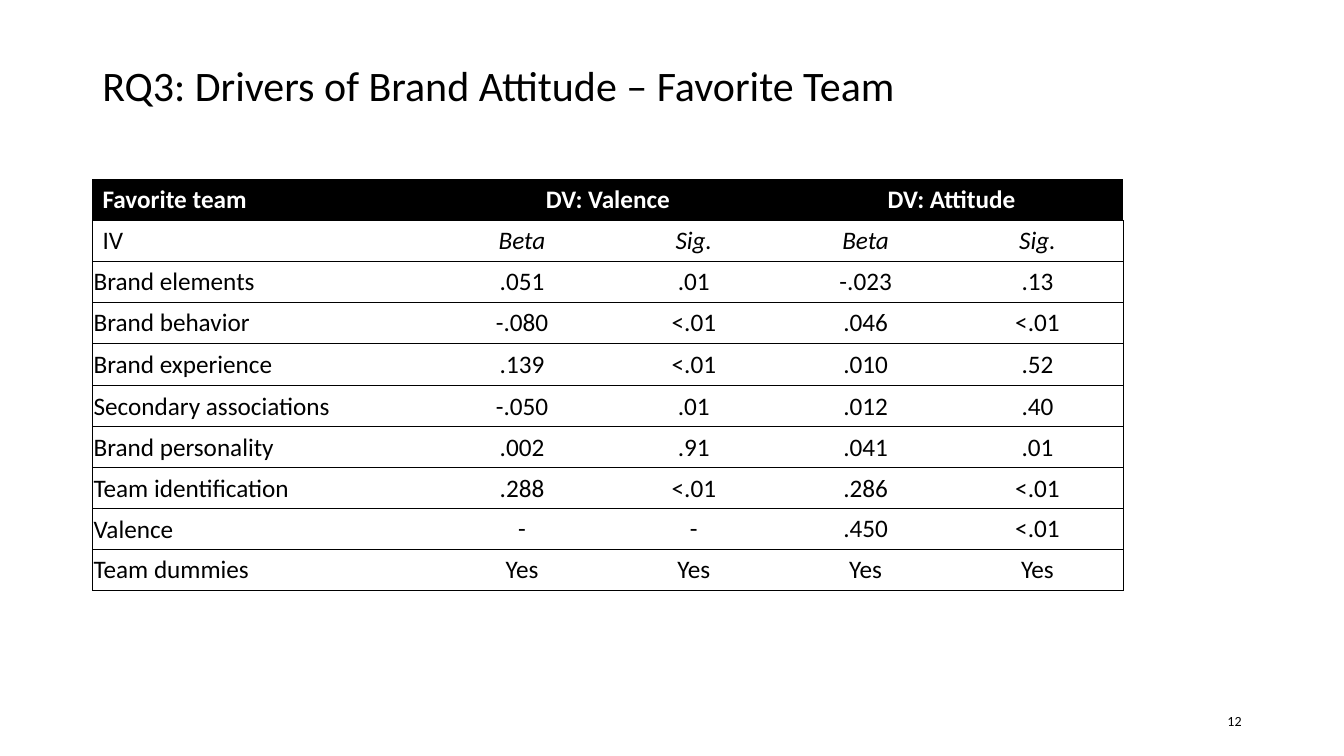
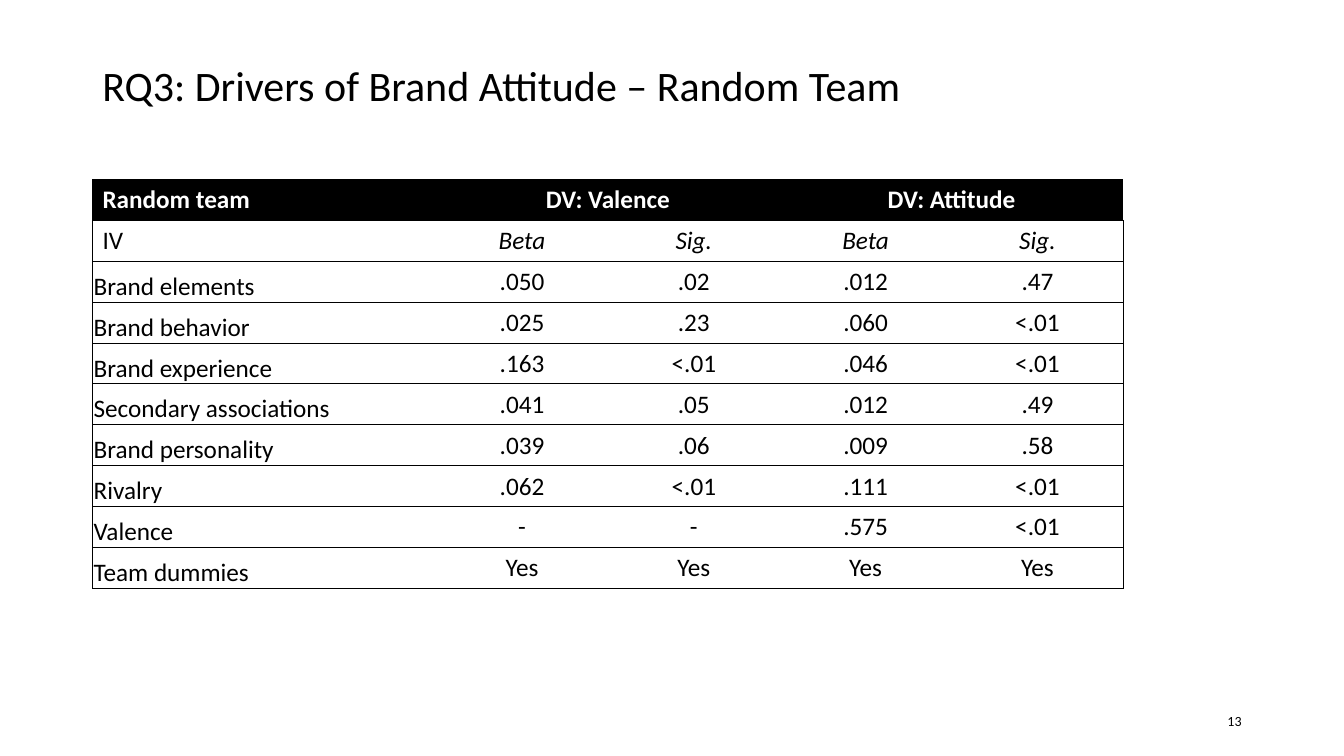
from lxml.etree import SubElement
from pptx import Presentation
from pptx.dml.color import RGBColor
from pptx.enum.text import MSO_ANCHOR, PP_ALIGN
from pptx.oxml.ns import qn
from pptx.util import Cm, Pt

COLORS = {"ink": "000000", "paper": "FFFFFF"}
FONT = "Calibri"
LEFT = Cm(2.33)
COLUMN_WIDTHS = [8.66] + [4.33] * 4
ROW_HEIGHT = 1.03
TIGHT = Cm(0.03)

RESULTS = [
    {
        "team": "Favorite",
        "page": "12",
        "label_anchor": MSO_ANCHOR.MIDDLE,
        "tall_rows": {4: 1.08},
        "drivers": [
            ["Brand elements", ".051", ".01", "-.023", ".13"],
            ["Brand behavior", "-.080", "<.01", ".046", "<.01"],
            ["Brand experience", ".139", "<.01", ".010", ".52"],
            ["Secondary associations", "-.050", ".01", ".012", ".40"],
            ["Brand personality", ".002", ".91", ".041", ".01"],
            ["Team identification", ".288", "<.01", ".286", "<.01"],
            ["Valence", "-", "-", ".450", "<.01"],
            ["Team dummies", "Yes", "Yes", "Yes", "Yes"],
        ],
    },
    {
        "team": "Random",
        "page": "13",
        "label_anchor": MSO_ANCHOR.BOTTOM,
        "tall_rows": {},
        "drivers": [
            ["Brand elements", ".050", ".02", ".012", ".47"],
            ["Brand behavior", ".025", ".23", ".060", "<.01"],
            ["Brand experience", ".163", "<.01", ".046", "<.01"],
            ["Secondary associations", ".041", ".05", ".012", ".49"],
            ["Brand personality", ".039", ".06", ".009", ".58"],
            ["Rivalry", ".062", "<.01", ".111", "<.01"],
            ["Valence", "-", "-", ".575", "<.01"],
            ["Team dummies", "Yes", "Yes", "Yes", "Yes"],
        ],
    },
]


def write(frame, text, size, color="ink", align=PP_ALIGN.LEFT, bold=False, italic=False):
    paragraph = frame.paragraphs[0]
    paragraph.alignment = align
    run = paragraph.add_run()
    run.text = text
    run.font.name = FONT
    run.font.size = Pt(size)
    run.font.bold = bold
    run.font.italic = italic
    run.font.color.rgb = RGBColor.from_string(COLORS[color])
    return paragraph


def set_borders(cell, drawn):
    properties = cell._tc.get_or_add_tcPr()
    for side in "LRTB":
        line = SubElement(properties, qn(f"a:ln{side}"), w=str(Pt(0.5)))
        if side in drawn:
            fill = SubElement(line, qn("a:solidFill"))
            SubElement(fill, qn("a:srgbClr"), val=COLORS["ink"])
        else:
            SubElement(line, qn("a:noFill"))


prs = Presentation()
prs.slide_width = Cm(33.87)
prs.slide_height = Cm(19.05)

for result in RESULTS:
    slide = prs.slides.add_slide(prs.slide_layouts[6])

    title = slide.shapes.add_textbox(LEFT, Cm(1.57), Cm(29.21), Cm(1.35)).text_frame
    title.word_wrap = True
    title.vertical_anchor = MSO_ANCHOR.BOTTOM
    heading = write(title, f"RQ3: Drivers of Brand Attitude – {result['team']} Team", 30)
    heading.line_spacing = 0.9

    page = slide.shapes.add_textbox(Cm(23.92), Cm(17.66), Cm(7.62), Cm(1.01)).text_frame
    page.word_wrap = True
    page.vertical_anchor = MSO_ANCHOR.MIDDLE
    write(page, result["page"], 10, align=PP_ALIGN.RIGHT)

    rows = [
        [f"{result['team']} team", "DV: Valence", "", "DV: Attitude", ""],
        ["IV", "Beta", "Sig.", "Beta", "Sig."],
    ] + result["drivers"]
    heights = [result["tall_rows"].get(r, ROW_HEIGHT) for r in range(len(rows))]
    table = slide.shapes.add_table(
        len(rows), len(COLUMN_WIDTHS), LEFT, Cm(4.52), Cm(sum(COLUMN_WIDTHS)), Cm(sum(heights))
    ).table
    table.first_row = False
    table.horz_banding = False
    for column, width in zip(table.columns, COLUMN_WIDTHS):
        column.width = Cm(width)
    for row, height in zip(table.rows, heights):
        row.height = Cm(height)
    for first in (1, 3):
        table.cell(0, first).merge(table.cell(0, first + 1))

    for r, texts in enumerate(rows):
        is_header = r == 0
        for c, text in enumerate(texts):
            cell = table.cell(r, c)
            is_label = c == 0
            set_borders(cell, "TB" + ("L" if is_label else "") + ("R" if c == 4 else ""))
            cell.fill.solid()
            cell.fill.fore_color.rgb = RGBColor.from_string(COLORS["ink" if is_header else "paper"])
            cell.vertical_anchor = MSO_ANCHOR.MIDDLE
            if r > 1 and is_label:
                cell.vertical_anchor = result["label_anchor"]
            if r > 1 and (is_label or r < 8):
                cell.margin_left = cell.margin_right = cell.margin_top = TIGHT
                cell.margin_bottom = 0
            if text:
                write(
                    cell.text_frame, text, 18,
                    color="paper" if is_header else "ink",
                    align=PP_ALIGN.LEFT if is_label else PP_ALIGN.CENTER,
                    bold=is_header,
                    italic=r == 1 and not is_label,
                )

prs.save("out.pptx")
